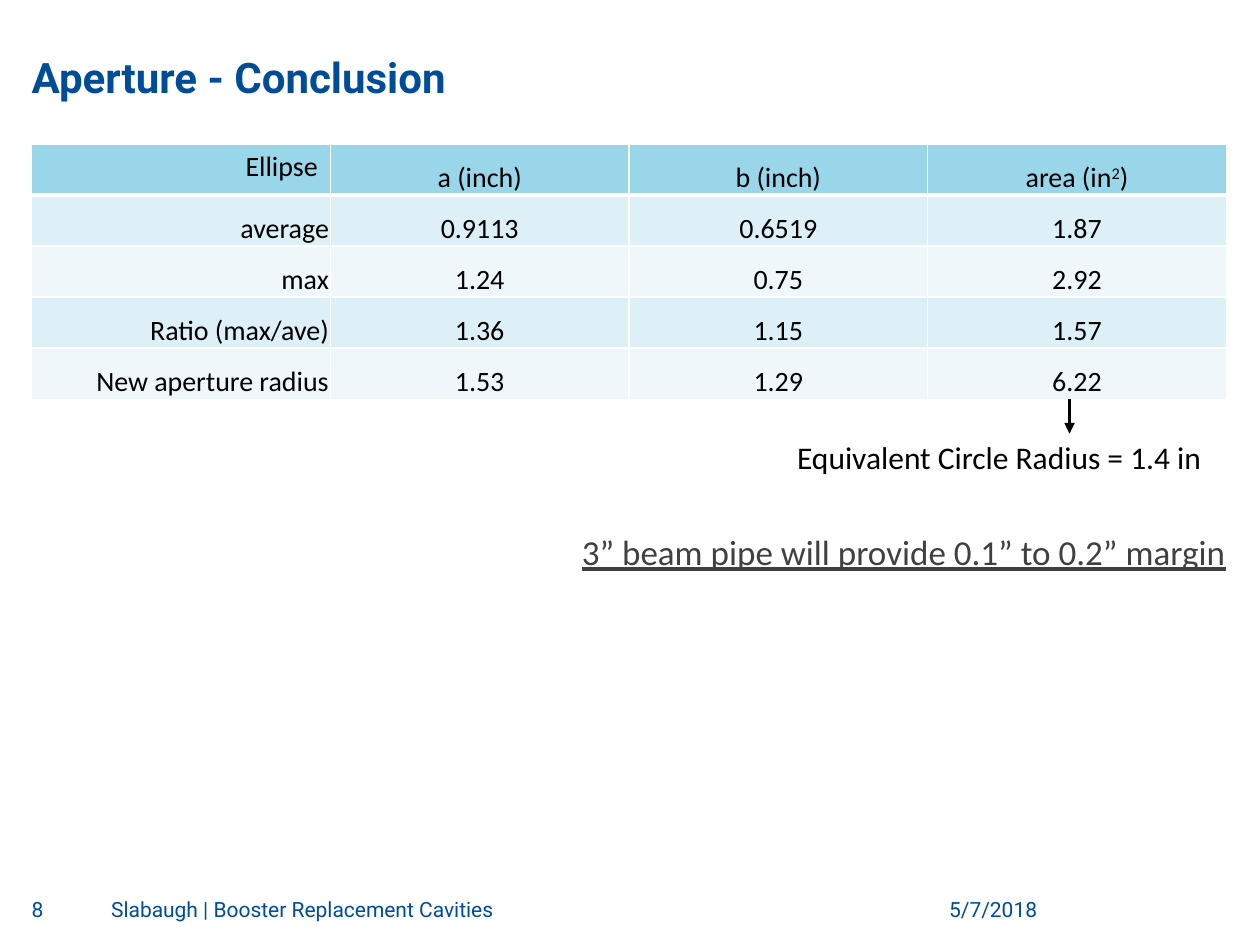
"""Build the aperture conclusion slide."""
import dataclasses

import lxml.etree
import pptx
import pptx.dml.color
import pptx.enum.shapes
import pptx.enum.text
import pptx.oxml.ns
import pptx.util

Cm = pptx.util.Cm
Pt = pptx.util.Pt
Align = pptx.enum.text.PP_ALIGN
Anchor = pptx.enum.text.MSO_ANCHOR
Fit = pptx.enum.text.MSO_AUTO_SIZE
qn = pptx.oxml.ns.qn


@dataclasses.dataclass(frozen=True)
class Theme:
    blue: str = "004C97"
    black: str = "000000"
    gray: str = "404040"
    white: str = "FFFFFF"
    head: str = "99D6EA"
    bands: tuple = ("DEF0F7", "EFF7FB")
    brand: str = "Roboto"
    plain: str = "Calibri"
    title: int = 24
    cell: int = 16
    foot: int = 12
    note: int = 18
    claim: int = 20


def color(code):
    return pptx.dml.color.RGBColor.from_string(code)


def write(frame, text, font, size, ink, bold=False, under=False, align=Align.LEFT):
    para = frame.paragraphs[0]
    para.alignment = align
    for index, part in enumerate(text.split("^")):
        run = para.add_run()
        run.text = part
        run.font.name = font
        run.font.size = Pt(size)
        run.font.bold = bold
        run.font.underline = under
        run.font.color.rgb = color(ink)
        if index % 2:
            run.font._element.set("baseline", "30000")


def inset(item, left, top, right, bottom):
    item.margin_left, item.margin_top = Cm(left), Cm(top)
    item.margin_right, item.margin_bottom = Cm(right), Cm(bottom)


def edge(cell, code, widths):
    props = cell._tc.get_or_add_tcPr()
    for side, width in zip("LRTB", widths):
        line = lxml.etree.SubElement(props, qn(f"a:ln{side}"), w=str(Pt(width)))
        fill = lxml.etree.SubElement(line, qn("a:solidFill"))
        lxml.etree.SubElement(fill, qn("a:srgbClr"), val=code)


class Page:
    def __init__(self, slide, theme):
        self.slide = slide
        self.theme = theme

    def title(self, text, left, top, width, height):
        shape = self.slide.shapes.title
        shape.left, shape.top = Cm(left), Cm(top)
        shape.width, shape.height = Cm(width), Cm(height)
        frame = shape.text_frame
        frame.auto_size = Fit.NONE
        frame.vertical_anchor = Anchor.BOTTOM
        inset(frame, 0, 0, 0, 0)
        write(frame, text, self.theme.brand, self.theme.title, self.theme.blue, bold=True)

    def box(self, left, top, width, height):
        shape = self.slide.shapes.add_textbox(Cm(left), Cm(top), Cm(width), Cm(height))
        return shape.text_frame

    def foot(self, text, left, width, align=Align.LEFT):
        frame = self.box(left, 18.08, width, 0.66)
        frame.word_wrap = True
        inset(frame, 0, 0, 0, 0)
        write(frame, text, self.theme.brand, self.theme.foot, self.theme.blue, align=align)

    def note(self, text, left, top, width, height, **style):
        frame = self.box(left, top, width, height)
        frame.word_wrap = False
        frame.auto_size = Fit.SHAPE_TO_FIT_TEXT
        write(frame, text, self.theme.plain, **style)

    def table(self, rows, left, top, width, height):
        shape = self.slide.shapes.add_table(
            len(rows), len(rows[0]), Cm(left), Cm(top), Cm(width), Cm(height))
        table = shape.table
        table.first_row = table.horz_banding = False
        for r, row in enumerate(rows):
            for c, text in enumerate(row):
                self.cell(table.cell(r, c), text, r, c)

    def cell(self, cell, text, r, c):
        theme = self.theme
        edge(cell, theme.white, (1, 1, 1, 1 if r else 3))
        cell.fill.solid()
        cell.fill.fore_color.rgb = color(theme.bands[(r - 1) % 2] if r else theme.head)
        if r or c:
            cell.vertical_anchor = Anchor.BOTTOM
            inset(cell, 0.03, 0.03, 0.03, 0)
        write(cell.text_frame, text, theme.plain, theme.cell, theme.black,
              align=Align.CENTER if c else Align.RIGHT)

    def arrow(self, x, top, end):
        line = self.slide.shapes.add_connector(
            pptx.enum.shapes.MSO_CONNECTOR.STRAIGHT, Cm(x), Cm(top), Cm(x), Cm(end))
        line.line.color.rgb = color(self.theme.black)
        line.line.width = Pt(2)
        props = line._element.spPr
        lxml.etree.SubElement(props.find(qn("a:ln")), qn("a:tailEnd"), type="triangle")
        lxml.etree.SubElement(props, qn("a:effectLst"))


def main():
    deck = pptx.Presentation()
    deck.slide_width, deck.slide_height = Cm(25.4), Cm(19.05)
    theme = Theme()
    page = Page(deck.slides.add_slide(deck.slide_layouts[5]), theme)
    page.title("Aperture - Conclusion", 0.64, 0.28, 24.13, 1.78)
    page.table([
        ("Ellipse", "a (inch)", "b (inch)", "area (in^2^)"),
        ("average", "0.9113", "0.6519", "1.87"),
        ("max", "1.24", "0.75", "2.92"),
        ("Ratio (max/ave)", "1.36", "1.15", "1.57"),
        ("New aperture radius", "1.53", "1.29", "6.22"),
    ], 0.64, 2.9, 24.08, 5.15)
    page.foot("5/7/2018", 17.91, 3, Align.RIGHT)
    page.foot("Slabaugh | Booster Replacement Cavities", 2.24, 14.94)
    page.foot("8", 0.64, 1.24)
    page.note("Equivalent Circle Radius = 1.4 in", 15.82, 8.71, 8.76, 1.02,
              size=theme.note, ink=theme.black)
    page.arrow(21.56, 8.05, 8.74)
    page.note("3” beam pipe will provide 0.1” to 0.2” margin", 11.48, 10.57, 13.59, 1.12,
              size=theme.claim, ink=theme.gray, under=True)
    deck.save("out.pptx")


if __name__ == "__main__":
    main()
